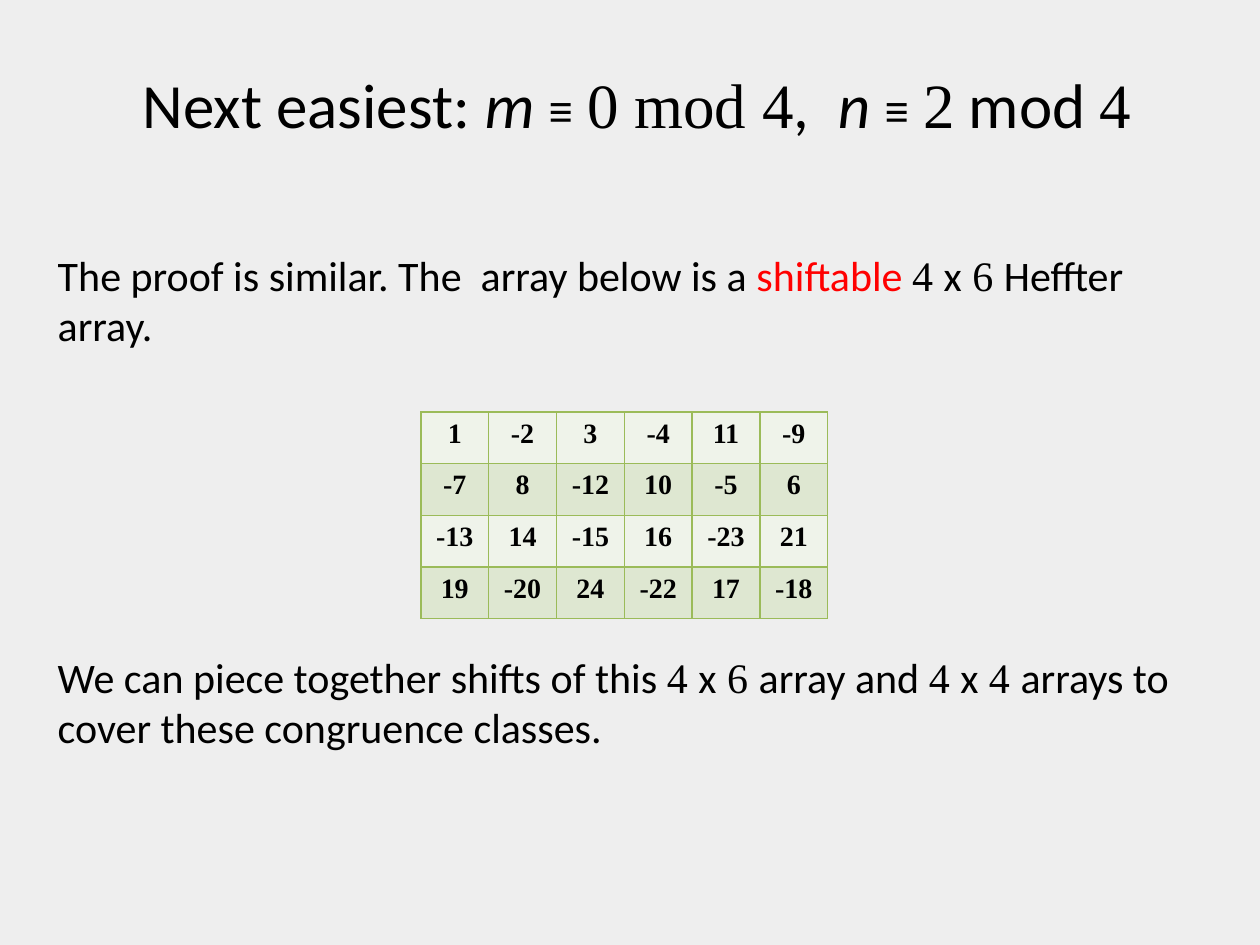
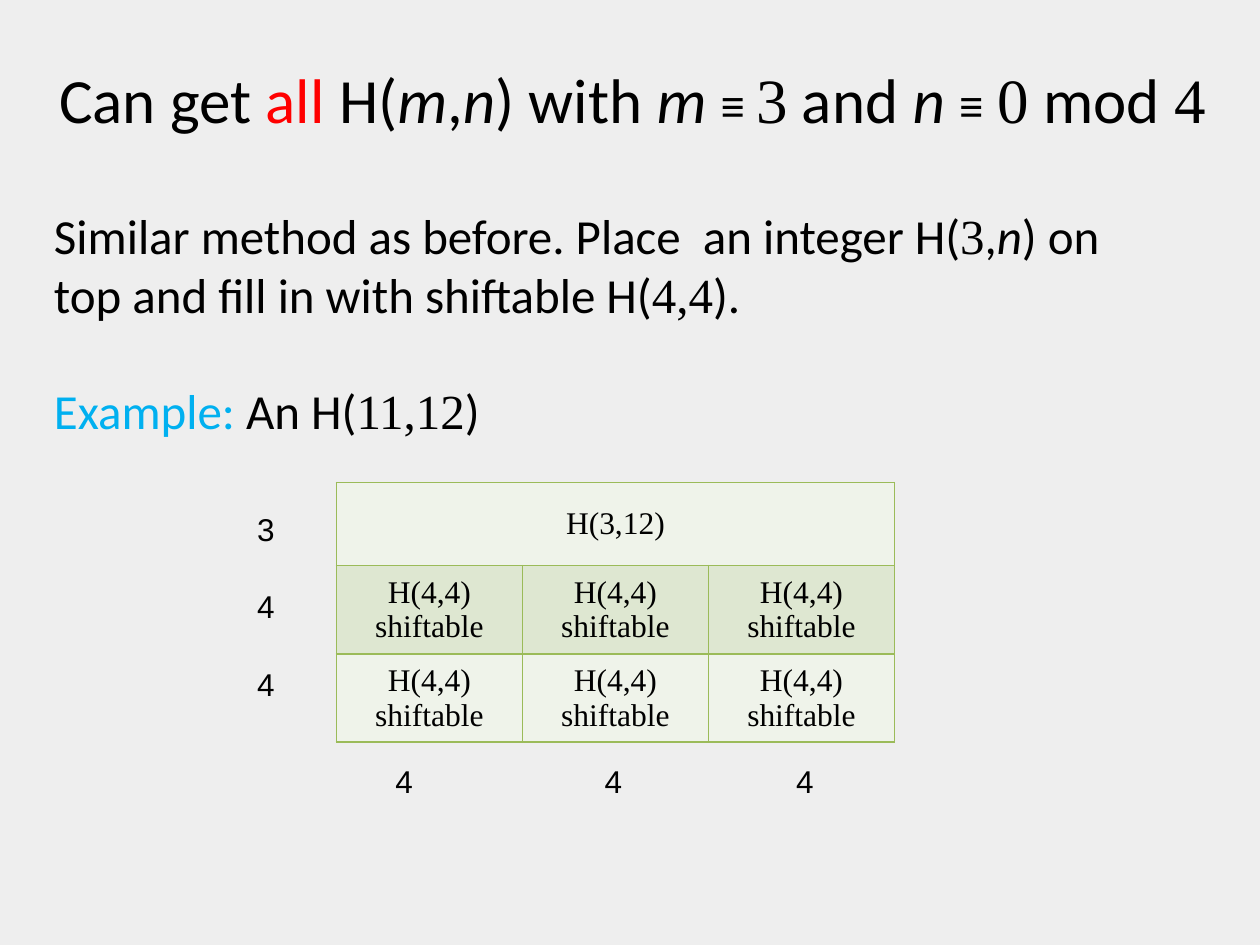
import pptx
import pptx.dml.color
import pptx.enum.text
import pptx.util
from lxml import etree
from pptx.oxml.ns import qn

Inches = pptx.util.Inches
Pt = pptx.util.Pt
RGBColor = pptx.dml.color.RGBColor
ANCHOR = pptx.enum.text.MSO_ANCHOR
ALIGN = pptx.enum.text.PP_ALIGN

# Shared colours and text formats
BACKGROUND = RGBColor(0xEE, 0xEE, 0xEE)
BLACK = RGBColor(0, 0, 0)
RED = RGBColor(0xFF, 0, 0)
BLUE = RGBColor(0, 0xB0, 0xF0)
GRID_GREEN = RGBColor(0x9B, 0xBB, 0x59)
ROW_TINTS = (RGBColor(0xEF, 0xF3, 0xEA), RGBColor(0xDE, 0xE7, 0xD1))
SANS = {"name": "Calibri"}
SERIF = {"name": "Times New Roman"}
LABEL = {"name": "Arial", "size": Pt(18)}
ITALIC = {"italic": True}
TITLE = {**SANS, "size": Pt(36)}
SYMBOL = {"size": Pt(28)}


def add_text(slide, box, paragraphs, base, align=ALIGN.LEFT,
             anchor=ANCHOR.TOP, gap=0):
    """Add a text box; each paragraph is a list of (text, format, colour) runs."""
    frame = slide.shapes.add_textbox(*map(Inches, box)).text_frame
    frame.word_wrap = True
    frame.vertical_anchor = anchor
    for index, runs in enumerate(paragraphs):
        paragraph = frame.add_paragraph() if index else frame.paragraphs[0]
        paragraph.alignment = align
        if index:
            paragraph.space_before = Pt(gap)
        for text, style, colour in runs:
            run = paragraph.add_run()
            run.text = text
            for attribute, value in {**base, **style}.items():
                setattr(run.font, attribute, value)
            run.font.color.rgb = colour
    return frame


def add_grid(slide, box, rows, heights, style, anchor=ANCHOR.TOP):
    """Add a tinted table with thin green borders on every cell."""
    table = slide.shapes.add_table(len(rows), len(rows[0]), *map(Inches, box)).table
    table.first_row = table.horz_banding = False
    for r, row in enumerate(rows):
        table.rows[r].height = Inches(heights[r])
        for c, text in enumerate(row):
            cell = table.cell(r, c)
            for side in ("a:lnL", "a:lnR", "a:lnT", "a:lnB"):
                line = etree.SubElement(cell._tc.get_or_add_tcPr(), qn(side), w=str(Pt(1)))
                paint = etree.SubElement(line, qn("a:solidFill"))
                etree.SubElement(paint, qn("a:srgbClr"), val=str(GRID_GREEN))
            cell.fill.solid()
            cell.fill.fore_color.rgb = ROW_TINTS[r % 2]
            cell.vertical_anchor = anchor
            cell.text = text
            for paragraph in cell.text_frame.paragraphs:
                paragraph.alignment = ALIGN.CENTER
                for attribute, value in style.items():
                    setattr(paragraph.font, attribute, value)
                paragraph.font.color.rgb = BLACK
    return table


presentation = pptx.Presentation()
presentation.slide_width = Inches(10)
presentation.slide_height = Inches(7.5)
shiftable_slide, all_slide = [
    presentation.slides.add_slide(presentation.slide_layouts[6]) for _ in range(2)]
for slide in (shiftable_slide, all_slide):
    slide.background.fill.solid()
    slide.background.fill.fore_color.rgb = BACKGROUND

# Slide 1: title
add_text(shiftable_slide, (0.33, 0.33, 9.45, 0.84), [[
    ("Next easiest: ", {}, BLACK), ("m ", ITALIC, BLACK), ("≡", SYMBOL, BLACK),
    (" ", {}, BLACK), ("0 mod 4", SERIF, BLACK), (",  ", {}, BLACK),
    ("n ", ITALIC, BLACK), ("≡", SYMBOL, BLACK), (" ", {}, BLACK),
    ("2", SERIF, BLACK), (" mod ", {}, BLACK), ("4", SERIF, BLACK),
]], TITLE, ALIGN.CENTER, ANCHOR.BOTTOM)

# Slide 1: text above and below the array
four_by = [("4 ", SERIF, BLACK), ("x", {}, BLACK)]
four_by_six = four_by + [(" 6 ", SERIF, BLACK)]
add_text(shiftable_slide, (0.36, 1.93, 9.39, 4.41), [
    [("The proof is similar. The  array below is a ", {}, BLACK),
     ("shiftable ", {}, RED), *four_by_six, ("Heffter array.", {}, BLACK)],
    [("We can piece together shifts of this ", {}, BLACK), *four_by_six,
     ("array and ", {}, BLACK), *four_by, (" 4 ", SERIF, BLACK),
     ("arrays to cover these congruence classes.", {}, BLACK)],
], {**SANS, "size": Pt(24)}, gap=172)

# Slide 1: the 4 x 6 Heffter array
heffter_array = [
    [1, -2, 3, -4, 11, -9],
    [-7, 8, -12, 10, -5, 6],
    [-13, 14, -15, 16, -23, 21],
    [19, -20, 24, -22, 17, -18],
]
add_grid(shiftable_slide, (3.34, 3.27, 3.23, 1.63),
         [[str(entry) for entry in row] for row in heffter_array], [0.41] * 4,
         {**SERIF, "size": Pt(16), "bold": True})

# Slide 2: title
add_text(all_slide, (0.06, 0.42, 9.92, 0.71), [[
    ("Can get ", {}, BLACK), ("all", {}, RED), (" H(", {}, BLACK),
    ("m", ITALIC, BLACK), (",", {}, BLACK), ("n", ITALIC, BLACK),
    (") with ", {}, BLACK), ("m ", ITALIC, BLACK), ("≡ ", SYMBOL, BLACK),
    ("3", SERIF, BLACK), (" and ", {}, BLACK), ("n ", ITALIC, BLACK),
    ("≡", SYMBOL, BLACK), (" ", {}, BLACK), ("0", SERIF, BLACK),
    (" mod ", {}, BLACK), ("4", SERIF, BLACK),
]], TITLE, ALIGN.CENTER, ANCHOR.BOTTOM)

# Slide 2: method and example
add_text(all_slide, (0.33, 1.58, 8.98, 2.17), [
    [("Similar method as before. Place  an integer H(", {}, BLACK),
     ("3", SERIF, BLACK), (",", {}, BLACK), ("n", ITALIC, BLACK),
     (") on top and fill in with shiftable H(", {}, BLACK),
     ("4,4", SERIF, BLACK), (").", {}, BLACK)],
    [("Example: ", {}, BLUE), ("An H(", {}, BLACK),
     ("11,12", SERIF, BLACK), (")", {}, BLACK)],
], {**SANS, "size": Pt(28)}, gap=33)

# Slide 2: block layout of H(11,12)
blocks = add_grid(all_slide, (2.67, 3.83, 4.43, 2.06),
                  [["H(3,12)", "", ""]] + [["H(4,4)\nshiftable"] * 3] * 2,
                  [0.66, 0.7, 0.7], {**SERIF, "size": Pt(18)}, ANCHOR.MIDDLE)
blocks.cell(0, 0).merge(blocks.cell(0, 2))

# Slide 2: block heights on the left, block widths below
add_text(all_slide, (1.84, 4, 0.54, 1.56),
         [[(height, {}, BLACK)] for height in "344"], LABEL, ALIGN.CENTER, gap=22.5)
widths = add_text(all_slide, (3.04, 6, 3.86, 0.34),
                  [[("4\t4\t4", {}, BLACK)]], LABEL)
tab_list = etree.SubElement(widths.paragraphs[0]._p.get_or_add_pPr(), qn("a:tabLst"))
for position in (1.66, 3.18):
    etree.SubElement(tab_list, qn("a:tab"), pos=str(Inches(position)), algn="l")

presentation.save("out.pptx")
